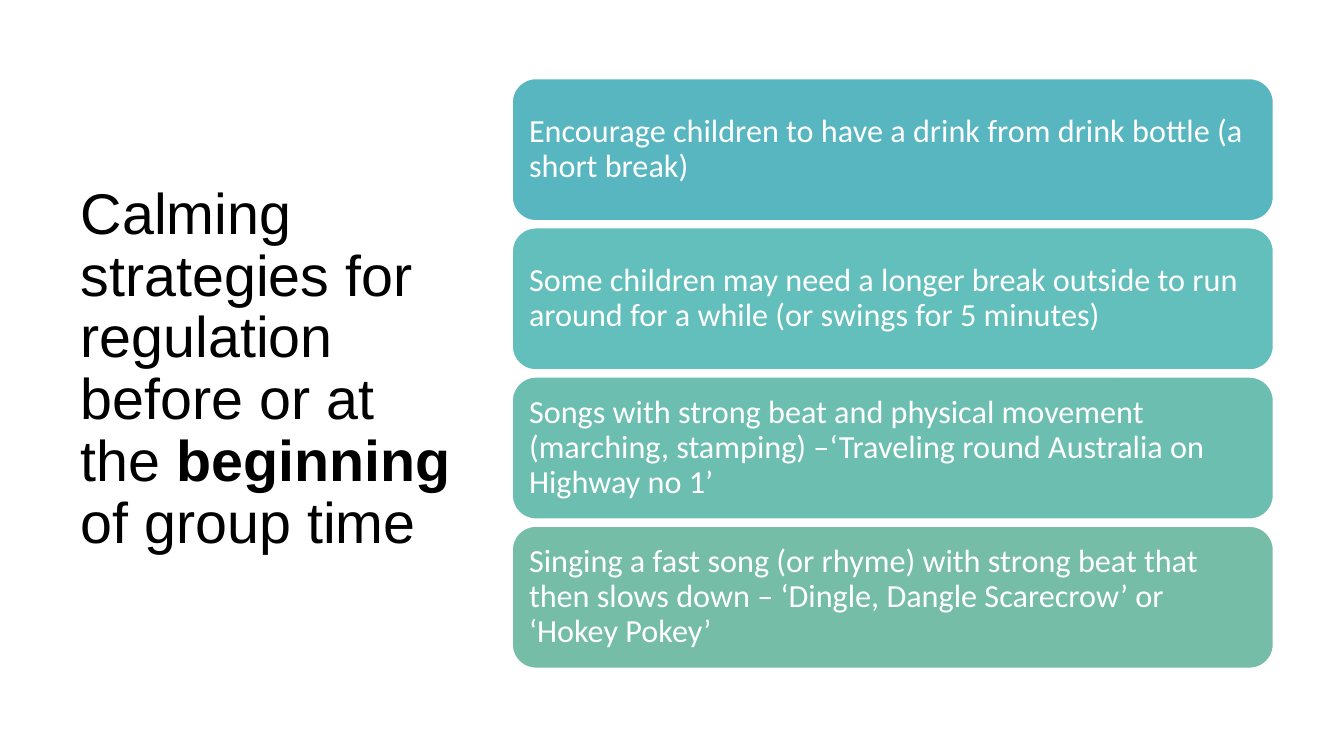
from dataclasses import dataclass

import pptx
import pptx.dml.color
import pptx.enum.shapes
import pptx.enum.text
import pptx.util

SLIDE_WIDTH, SLIDE_HEIGHT = 13.33, 7.5


@dataclass(frozen=True)
class Theme:
    white: str = "FFFFFF"
    title_color: str = "000000"
    card_fills: tuple = ("58B6C0", "62BFBB", "6CBEB0", "75BDA7")
    title_font: str = "Arial"
    card_font: str = "Calibri"
    title_size: int = 41
    card_size: int = 23
    outline: int = 1
    line_spacing: float = 0.9
    inset: float = 0.1


THEME = Theme()

# Boxes are left, top, width, height in inches
TITLE_BOX = (0.7, 1.6, 3.91, 3.97)
CARDS_BOX = (5.08, 0.78, 7.55, 5.85)
CARD_GAP = 0.07

TITLE_RUNS = (
    ("Calming strategies for regulation before or at the ", False),
    ("beginning", True),
    (" of group time", False),
)
STRATEGIES = (
    "Encourage children to have a drink from drink bottle (a short break)",
    "Some children may need a longer break outside to run around for a while "
    "(or swings for 5 minutes)",
    "Songs with strong beat and physical movement (marching, stamping) "
    "–‘Traveling round Australia on Highway no 1’",
    "Singing a fast song (or rhyme) with strong beat that then slows down "
    "– ‘Dingle, Dangle Scarecrow’ or ‘Hokey Pokey’",
)


def rgb(color):
    return pptx.dml.color.RGBColor.from_string(color)


def apply_format(target, values):
    for name, value in values.items():
        setattr(target, name, value)


def write_text(shape, runs, anchor, font, size, color):
    """Fill a shape with one left-aligned paragraph of (text, bold) runs."""
    inset = pptx.util.Inches(THEME.inset)
    frame = shape.text_frame
    apply_format(frame, {
        "word_wrap": True,
        "auto_size": pptx.enum.text.MSO_AUTO_SIZE.NONE,
        "vertical_anchor": anchor,
        "margin_left": inset,
        "margin_right": inset,
        "margin_top": inset if shape.is_placeholder is False else inset // 2,
        "margin_bottom": inset if shape.is_placeholder is False else inset // 2,
    })
    paragraph = frame.paragraphs[0]
    apply_format(paragraph, {
        "alignment": pptx.enum.text.PP_ALIGN.LEFT,
        "line_spacing": THEME.line_spacing,
    })
    for text, bold in runs:
        run = paragraph.add_run()
        run.text = text
        apply_format(run.font, {"name": font, "size": pptx.util.Pt(size), "bold": bold})
        run.font.color.rgb = rgb(color)


def place_title(slide, box):
    title = slide.shapes.title
    lengths = map(pptx.util.Inches, box)
    apply_format(title, dict(zip(("left", "top", "width", "height"), lengths)))
    write_text(title, TITLE_RUNS, pptx.enum.text.MSO_ANCHOR.BOTTOM,
               THEME.title_font, THEME.title_size, THEME.title_color)


def place_cards(slide, box):
    """Stack equal rounded cards down the height of the box."""
    left, top, width, height = box
    pitch = (height + CARD_GAP) / len(STRATEGIES)
    for row, (strategy, fill) in enumerate(zip(STRATEGIES, THEME.card_fills)):
        card_box = (left, top + row * pitch, width, pitch - CARD_GAP)
        card = slide.shapes.add_shape(
            pptx.enum.shapes.MSO_SHAPE.ROUNDED_RECTANGLE,
            *map(pptx.util.Inches, card_box))
        card.shadow.inherit = False
        card.fill.solid()
        card.fill.fore_color.rgb = rgb(fill)
        card.line.color.rgb = rgb(THEME.white)
        card.line.width = pptx.util.Pt(THEME.outline)
        write_text(card, [(strategy, False)], pptx.enum.text.MSO_ANCHOR.MIDDLE,
                   THEME.card_font, THEME.card_size, THEME.white)


def main():
    presentation = pptx.Presentation()
    presentation.slide_width = pptx.util.Inches(SLIDE_WIDTH)
    presentation.slide_height = pptx.util.Inches(SLIDE_HEIGHT)
    slide = presentation.slides.add_slide(
        presentation.slide_layouts.get_by_name("Title Only"))

    # Heading on the left, strategies on the right
    place_title(slide, TITLE_BOX)
    place_cards(slide, CARDS_BOX)
    presentation.save("out.pptx")


if __name__ == "__main__":
    main()
